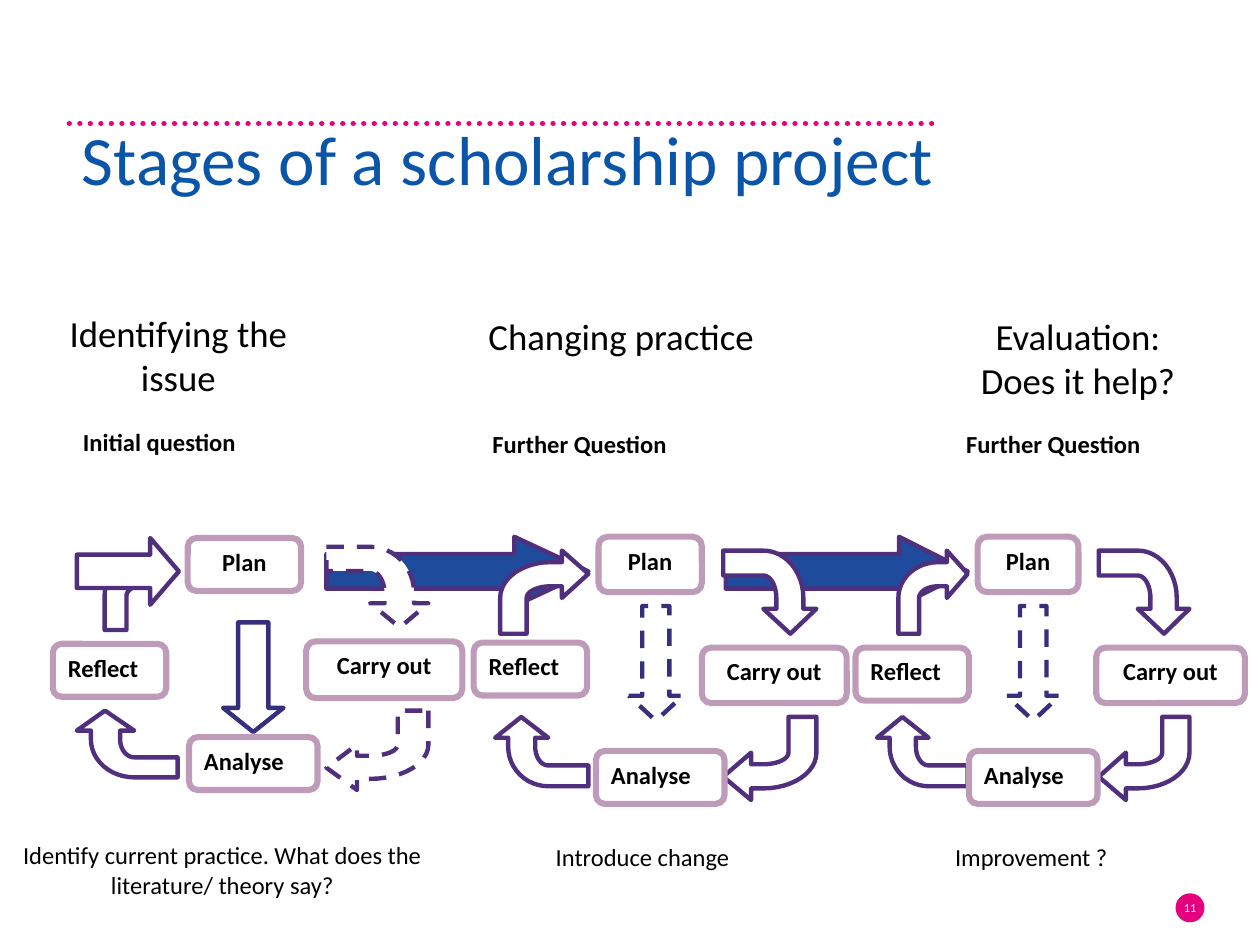
"""Build the slide on the stages of a scholarship project."""
import math

import pptx
import pptx.dml.color
import pptx.enum.dml
import pptx.enum.shapes
import pptx.enum.text
import pptx.oxml
import pptx.util

SHAPE = pptx.enum.shapes.MSO_SHAPE
ALIGN = pptx.enum.text.PP_ALIGN
ANCHOR = pptx.enum.text.MSO_ANCHOR
DASH = pptx.enum.dml.MSO_LINE

PURPLE, INDIGO, MAUVE = "502F7D", "352F7D", "BE9CB9"
WHITE, BLACK, PINK, BLUE = "FFFFFF", "000000", "E5007D", "1E4B9B"

TITLE = ("Stages of a scholarship project", (0.55, 0.97, 7.31, 0.64))
LINK_ARROWS = [((5.76, 4.26, 1.92, 0.55), 0.99), ((2.59, 4.26, 2.08, 0.55), 1.07)]
CYCLES = [
    {
        "bent": [
            (90, (2.59, 4.34, 0.81, 0.64), True),
            (270, (0.61, 5.64, 0.8, 0.53), False),
            (180, (2.59, 5.64, 0.81, 0.63), True),
            (0, (0.83, 4.37, 0.58, 0.63), False),
        ],
        "straight": [
            (SHAPE.RIGHT_ARROW, (0.61, 4.27, 0.81, 0.53), 0.43, PURPLE, False),
            (SHAPE.DOWN_ARROW, (1.77, 4.94, 0.48, 0.87), 0.4, INDIGO, False),
        ],
        "steps": [
            ("Plan", (1.49, 4.27, 0.9, 0.42)),
            ("Reflect", (0.42, 5.11, 0.9, 0.42)),
            ("Carry out", (2.43, 5.09, 1.24, 0.45)),
            ("Analyse", (1.5, 5.85, 1.02, 0.42)),
        ],
    },
    {
        "bent": [
            (90, (5.74, 4.37, 0.74, 0.66), False),
            (270, (3.93, 5.69, 0.74, 0.55), False),
            (180, (5.74, 5.69, 0.74, 0.66), False),
            (0, (3.97, 4.37, 0.7, 0.66), False),
        ],
        "straight": [(SHAPE.DOWN_ARROW, (4.99, 4.81, 0.43, 0.91), 0.46, INDIGO, True)],
        "steps": [
            ("Plan", (4.75, 4.26, 0.82, 0.44)),
            ("Carry out", (5.57, 5.14, 1.15, 0.44)),
            ("Reflect", (3.76, 5.1, 0.9, 0.42)),
            ("Analyse", (4.73, 5.96, 1.02, 0.42)),
        ],
    },
    {
        "bent": [
            (90, (8.72, 4.37, 0.72, 0.66), False),
            (270, (6.96, 5.69, 0.72, 0.55), False),
            (180, (8.72, 5.69, 0.72, 0.66), False),
            (0, (7.13, 4.37, 0.55, 0.66), False),
        ],
        "straight": [(SHAPE.DOWN_ARROW, (7.99, 4.81, 0.42, 0.91), 0.47, INDIGO, True)],
        "steps": [
            ("Plan", (7.76, 4.26, 0.8, 0.44)),
            ("Carry out", (8.7, 5.14, 1.18, 0.44)),
            ("Reflect", (6.79, 5.14, 0.9, 0.42)),
            ("Analyse", (7.69, 5.96, 1.02, 0.42)),
        ],
    },
]
CENTRED_STEPS = ("Plan", "Carry out")
HEADING, QUESTION, CAPTION = {"size": 21}, {"size": 14, "bold": True}, {"size": 14}
LABELS = [
    ("Initial question", (0.03, 3.34, 2.47, 0.7), QUESTION, ALIGN.CENTER),
    ("Identifying the issue", (0.34, 2.42, 2.15, 0.81), HEADING, ALIGN.CENTER),
    ("Changing practice", (3.68, 2.44, 2.5, 0.45), HEADING, ALIGN.CENTER),
    ("Evaluation: Does it help?", (7.48, 2.44, 2.15, 0.81), HEADING, ALIGN.CENTER),
    ("Further Question", (3.81, 3.36, 1.58, 0.34), QUESTION, ALIGN.LEFT),
    ("Further Question", (7.57, 3.36, 1.58, 0.34), QUESTION, ALIGN.LEFT),
    ("Identify current practice. What does the literature/ theory say?",
     (0.01, 6.62, 3.51, 0.57), CAPTION, ALIGN.CENTER),
    ("Introduce change", (3.76, 6.63, 2.68, 0.34), CAPTION, ALIGN.CENTER),
    ("Improvement ?", (6.48, 6.63, 3.41, 0.34), CAPTION, ALIGN.CENTER),
]
TURNS = {
    0: lambda u, v: (u, v),
    90: lambda u, v: (1 - v, u),
    180: lambda u, v: (1 - u, 1 - v),
    270: lambda u, v: (v, 1 - u),
}


def inches(values):
    return [pptx.util.Inches(value) for value in values]


def paint(target, colour):
    target.rgb = pptx.dml.color.RGBColor.from_string(colour)


def style(shape, fill, line=None, width=2.5, dashed=False):
    shape.shadow.inherit = False
    shape.fill.solid()
    paint(shape.fill.fore_color, fill)
    if line is None:
        shape.line.fill.background()
        return
    paint(shape.line.color, line)
    shape.line.width = pptx.util.Pt(width)
    if dashed:
        shape.line.dash_style = DASH.DASH


def write(shape, text, size, colour=BLACK, bold=False, align=ALIGN.LEFT,
          spacing=None, **frame_format):
    frame = shape.text_frame
    formats = {"word_wrap": True, "vertical_anchor": ANCHOR.TOP, **frame_format}
    for name, value in formats.items():
        setattr(frame, name, value)
    para = frame.paragraphs[0]
    para.alignment = align
    if spacing:
        para.line_spacing = spacing
    span = para.add_run()
    span.text = text
    for name, value in {"name": "Calibri", "size": pptx.util.Pt(size), "bold": bold}.items():
        setattr(span.font, name, value)
    paint(span.font.color, colour)


def add_preset(page, kind, place, adjustments=()):
    shape = page.shapes.add_shape(kind, *inches(place))
    for index, value in enumerate(adjustments):
        shape.adjustments[index] = value
    return shape


def bend(radius_x, radius_y, centre=0.57, steps=12):
    angles = [math.pi / 2 * step / steps for step in range(steps + 1)]
    return [(centre - radius_x * math.cos(a), centre - radius_y * math.sin(a)) for a in angles]


def add_bent_arrow(page, turn, place, dashed):
    head = [(0.7, 0.14), (0.7, 0), (1, 0.28), (0.7, 0.57), (0.7, 0.43)]
    outline = [(0, 1), *bend(0.57, 0.43), *head, *reversed(bend(0.27, 0.14)), (0.3, 1)]
    left, top, width, height = place
    turned = [TURNS[turn](u, v) for u, v in outline]
    points = [inches((left + u * width, top + v * height)) for u, v in turned]
    builder = page.shapes.build_freeform(*points[0])
    builder.add_line_segments(points[1:], close=True)
    style(builder.convert_to_shape(), WHITE, PURPLE, dashed=dashed)


def add_cycle(page, cycle):
    for turn, place, dashed in cycle["bent"]:
        add_bent_arrow(page, turn, place, dashed)
    for kind, place, head, colour, dashed in cycle["straight"]:
        style(add_preset(page, kind, place, (0.5, head)), WHITE, colour, dashed=dashed)
    for text, place in cycle["steps"]:
        box = add_preset(page, SHAPE.ROUNDED_RECTANGLE, place)
        style(box, WHITE, MAUVE, 3.5)
        align = ALIGN.CENTER if text in CENTRED_STEPS else ALIGN.LEFT
        write(box, text, 14, bold=True, align=align)


def add_frame(page):
    style(add_preset(page, SHAPE.OVAL, (9.33, 7.09, 0.23, 0.23)), PINK)
    number = page.shapes.add_textbox(*inches((9.25, 7, 0.39, 0.4)))
    write(number, "11", 7, WHITE, align=ALIGN.CENTER, word_wrap=False,
          vertical_anchor=ANCHOR.MIDDLE)
    rule = page.shapes.add_connector(
        pptx.enum.shapes.MSO_CONNECTOR.STRAIGHT, *inches((0.55, 0.98, 7.47, 0.98)))
    paint(rule.line.color, PINK)
    rule.line.width = pptx.util.Pt(3)
    rule.line.dash_style = DASH.ROUND_DOT
    properties = rule.element.spPr
    properties.get_or_add_ln().set("cap", "rnd")
    properties.append(pptx.oxml.parse_xml(
        '<a:effectLst xmlns:a="http://schemas.openxmlformats.org/drawingml/2006/main"/>'))


def main():
    deck = pptx.Presentation()
    deck.slide_width, deck.slide_height = inches((10, 7.5))
    page = deck.slides.add_slide(deck.slide_layouts[5])
    add_frame(page)
    text, place = TITLE
    title = page.shapes.title
    for name, value in zip(("left", "top", "width", "height"), inches(place)):
        setattr(title, name, value)
    write(title, text, 39.6, "0B55A8", spacing=0.9, vertical_anchor=ANCHOR.MIDDLE,
          auto_size=pptx.enum.text.MSO_AUTO_SIZE.NONE)
    for place, head in LINK_ARROWS:
        style(add_preset(page, SHAPE.RIGHT_ARROW, place, (0.5, head)), BLUE, PURPLE)
    for cycle in CYCLES:
        add_cycle(page, cycle)
    for text, place, formats, align in LABELS:
        write(page.shapes.add_textbox(*inches(place)), text, align=align, **formats)
    deck.save("out.pptx")


if __name__ == "__main__":
    main()
